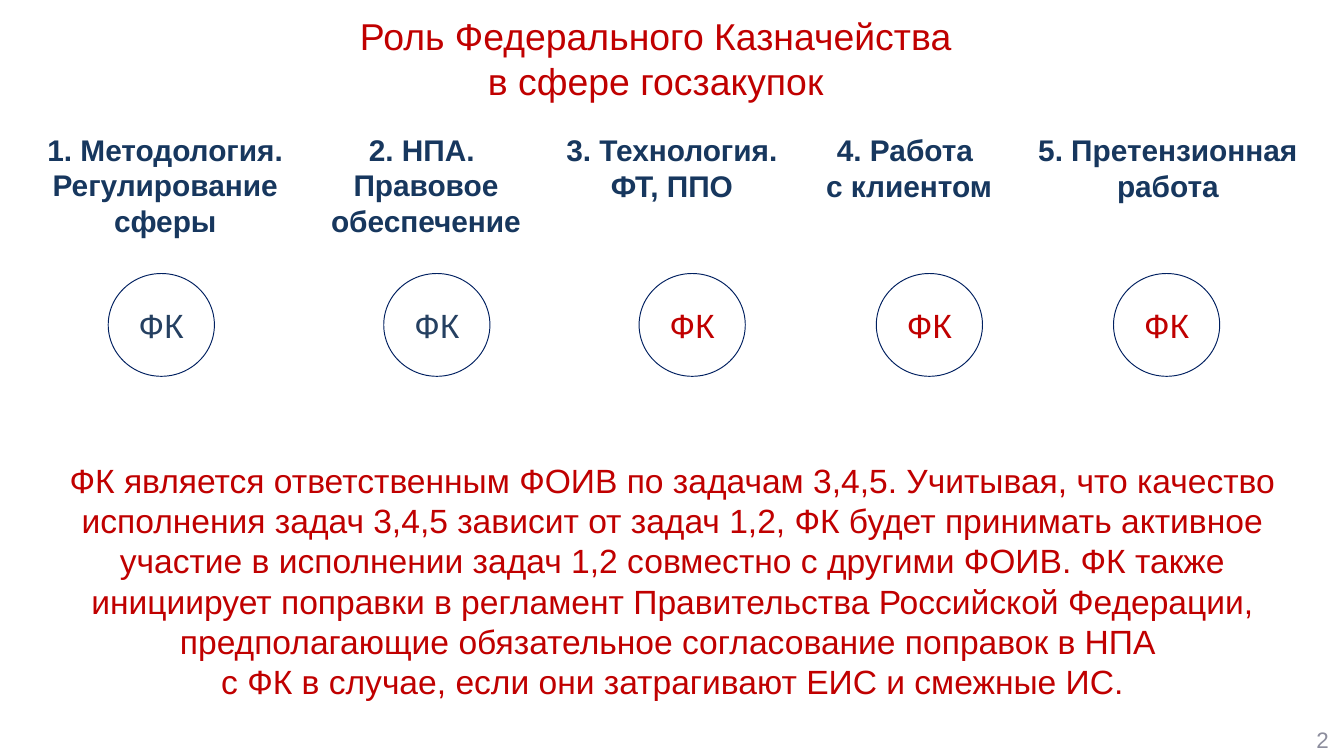
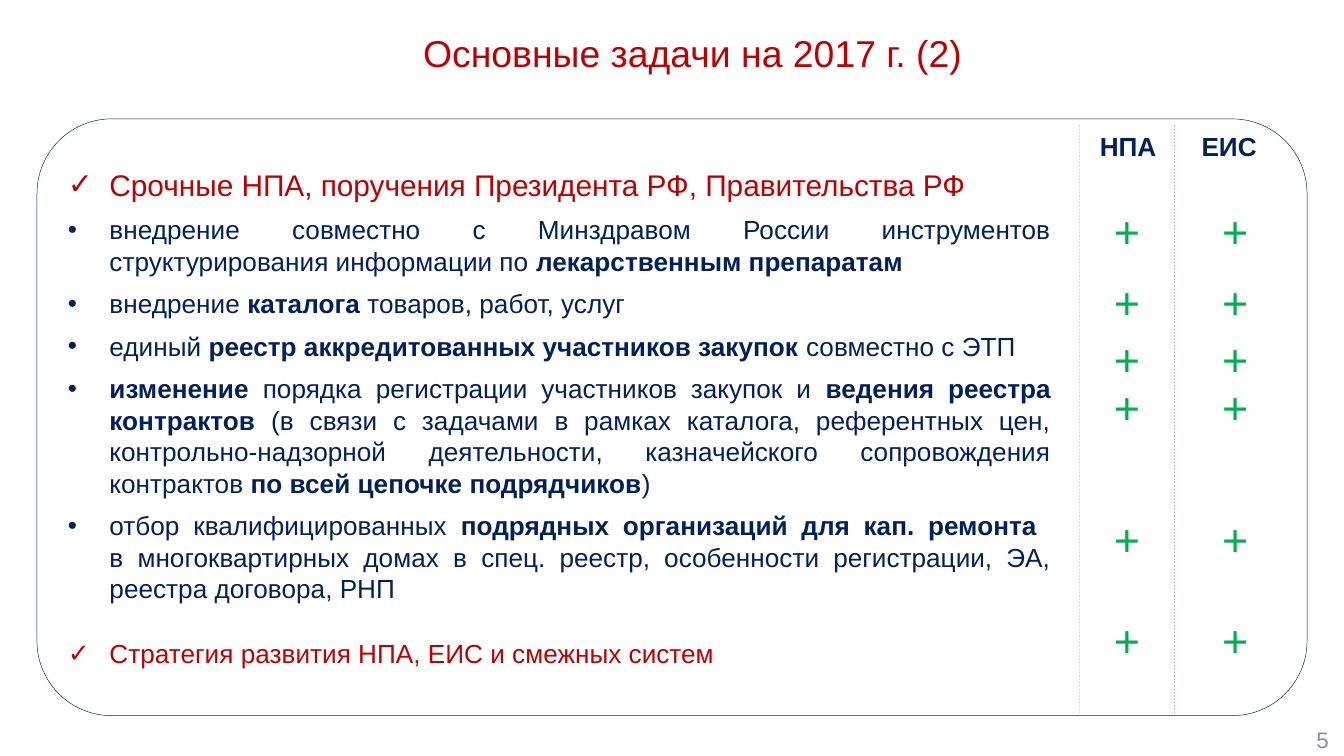
from pptx import Presentation
from pptx.dml.color import RGBColor
from pptx.enum.dml import MSO_LINE
from pptx.enum.shapes import MSO_CONNECTOR, MSO_SHAPE
from pptx.enum.text import MSO_ANCHOR, PP_ALIGN
from pptx.oxml.ns import qn
from pptx.util import Pt
from lxml.etree import SubElement

PX = 4572


class Theme:
    font = "Arial"
    red, navy, steel, slate = "C00000", "002060", "17375E", "254061"
    green, gray = "00B050", "8C8D9D"
    title, body, head, item, mark, page = 20, 18, 16, 14, 24, 12
    hair, thin = 0.25, 0.5


def write(frame, text, size=Theme.item, color=Theme.navy, bold=False,
          align=PP_ALIGN.CENTER, bullet=None, after=None):
    for line in text.split("\n"):
        para = frame.paragraphs[0]
        if para.runs:
            para = frame.add_paragraph()
        para.alignment = align
        if bullet:
            props = para._p.get_or_add_pPr()
            props.set("marL", str(62 * PX))
            props.set("indent", str(-62 * PX))
            SubElement(props, qn("a:buFont")).set("typeface", Theme.font)
            SubElement(props, qn("a:buChar")).set("char", bullet)
        if after:
            para.space_after = Pt(after)
        for i, part in enumerate(line.split("*")):
            for j, piece in enumerate(part.split("\v")):
                if j:
                    para.add_line_break()
                if piece:
                    run = para.add_run()
                    run.text = piece
                    run.font.name = Theme.font
                    run.font.size = Pt(size)
                    run.font.bold = bold or i % 2 == 1
                    run.font.color.rgb = RGBColor.from_string(color)


def put(slide, box, text="", kind=None, round=None, line=None, inset=None,
        anchor=MSO_ANCHOR.TOP, wrap=True, **style):
    area = [v * PX for v in box]
    if kind is None:
        shape = slide.shapes.add_textbox(*area)
    else:
        shape = slide.shapes.add_shape(kind, *area)
        shape.shadow.inherit = False
        shape.fill.background()
        if round is not None:
            shape.adjustments[0] = round
        if line:
            shape.line.color.rgb = RGBColor.from_string(Theme.navy)
            shape.line.width = Pt(line)
        else:
            shape.line.fill.background()
    frame = shape.text_frame
    frame.word_wrap = wrap
    frame.vertical_anchor = anchor
    if inset is not None:
        frame.margin_left = frame.margin_right = inset * PX
        frame.margin_top = frame.margin_bottom = inset * PX
    if text:
        write(frame, text, **style)
    return frame


deck = Presentation()
deck.slide_width, deck.slide_height = 2000 * PX, 1125 * PX
blank = deck.slide_layouts[6]

slides = []
for title, box, page in [
    ("Роль Федерального Казначейства\vв сфере госзакупок", (212, 10, 1528, 154), "2"),
    ("Основные задачи на 2017 г. (2)", (297, 16, 1468, 124), "5"),
]:
    slide = deck.slides.add_slide(blank)
    put(slide, box, title, anchor=MSO_ANCHOR.MIDDLE, size=Theme.title, color=Theme.red)
    put(slide, (1937, 1078, 60, 46), page, anchor=MSO_ANCHOR.MIDDLE,
        size=Theme.page, color=Theme.gray, align=PP_ALIGN.RIGHT)
    slides.append(slide)
role, tasks = slides

put(role, (43, 676, 1916, 390),
    "ФК является ответственным ФОИВ по задачам 3,4,5. Учитывая, что качество "
    "исполнения задач 3,4,5 зависит от задач 1,2, ФК будет принимать активное "
    "участие в исполнении задач 1,2 совместно с другими ФОИВ. ФК также "
    "инициирует поправки в регламент Правительства Российской Федерации, "
    "предполагающие обязательное согласование поправок в НПА \v"
    "с ФК в случае, если они затрагивают ЕИС и смежные ИС.",
    inset=8, size=Theme.body, color=Theme.red)

for text, left, width, high, ring, color in [
    ("1. Методология.\nРегулирование сферы", 36, 420, 156, 161, Theme.slate),
    ("2. НПА. \nПравовое обеспечение", 448, 372, 156, 571, Theme.slate),
    ("3. Технология.\nФТ, ППО", 812, 376, 190, 951, Theme.red),
    ("4. Работа \vс клиентом", 1180, 346, 190, 1304, Theme.red),
    ("5. Претензионная\nработа", 1518, 440, 190, 1657, Theme.red),
]:
    put(role, (left, 184, width, high), text, MSO_SHAPE.ROUNDED_RECTANGLE, round=0.03,
        size=Theme.head, color=Theme.steel, bold=True)
    put(role, (ring, 407, 158, 153), "ФК", MSO_SHAPE.OVAL, line=Theme.thin, inset=0,
        anchor=MSO_ANCHOR.MIDDLE, size=Theme.body, color=color)

put(tasks, (55, 177, 1890, 888), kind=MSO_SHAPE.ROUNDED_RECTANGLE, round=1 / 8,
    line=Theme.hair)

goals = put(tasks, (101, 248, 1463, 754), inset=0)
for text, bullet, size, color, after in [
    ("Срочные НПА, поручения Президента РФ, Правительства РФ",
     "✓", Theme.head, Theme.red, 6),
    ("внедрение совместно с Минздравом России инструментов структурирования "
     "информации по *лекарственным препаратам *", "•", Theme.item, Theme.navy, 6),
    ("внедрение *каталога* товаров, работ, услуг", "•", Theme.item, Theme.navy, 6),
    ("единый *реестр аккредитованных участников закупок* совместно с ЭТП",
     "•", Theme.item, Theme.navy, 6),
    ("*изменение* порядка регистрации участников закупок и *ведения реестра "
     "контрактов *(в связи с задачами в рамках каталога, референтных цен, "
     "контрольно-надзорной деятельности, казначейского сопровождения контрактов "
     "*по всей цепочке подрядчиков*) ", "•", Theme.item, Theme.navy, 6),
    ("отбор квалифицированных *подрядных организаций для кап. ремонта \v*"
     "в многоквартирных домах в спец. реестр, особенности регистрации, ЭА, "
     "реестра договора, РНП", "•", Theme.item, Theme.navy, 18),
    ("Стратегия развития НПА, ЕИС и смежных систем",
     "✓", Theme.item, Theme.red, 6),
]:
    write(goals, text, size=size, color=color, align=PP_ALIGN.JUSTIFY,
          bullet=bullet, after=after)

put(tasks, (1617, 184, 126, 68), "НПА", wrap=False, bold=True, align=PP_ALIGN.LEFT)
put(tasks, (1758, 184, 142, 68), "ЕИС", bold=True)

for x in (1606, 1748):
    rule = tasks.shapes.add_connector(
        MSO_CONNECTOR.STRAIGHT, x * PX, 186 * PX, x * PX, 1061 * PX)
    rule.line.color.rgb = RGBColor.from_string(Theme.navy)
    rule.line.width = Pt(Theme.hair)
    rule.line.dash_style = MSO_LINE.DASH
    tint = rule.line._ln.find(".//" + qn("a:srgbClr"))
    SubElement(tint, qn("a:alpha")).set("val", "45000")
    SubElement(rule._element.spPr, qn("a:effectLst"))

for top in (294, 399, 484, 556, 752, 902):
    for left in (1638, 1799):
        put(tasks, (left, top, 68, 100), "+", size=Theme.mark, color=Theme.green)

deck.save("out.pptx")
